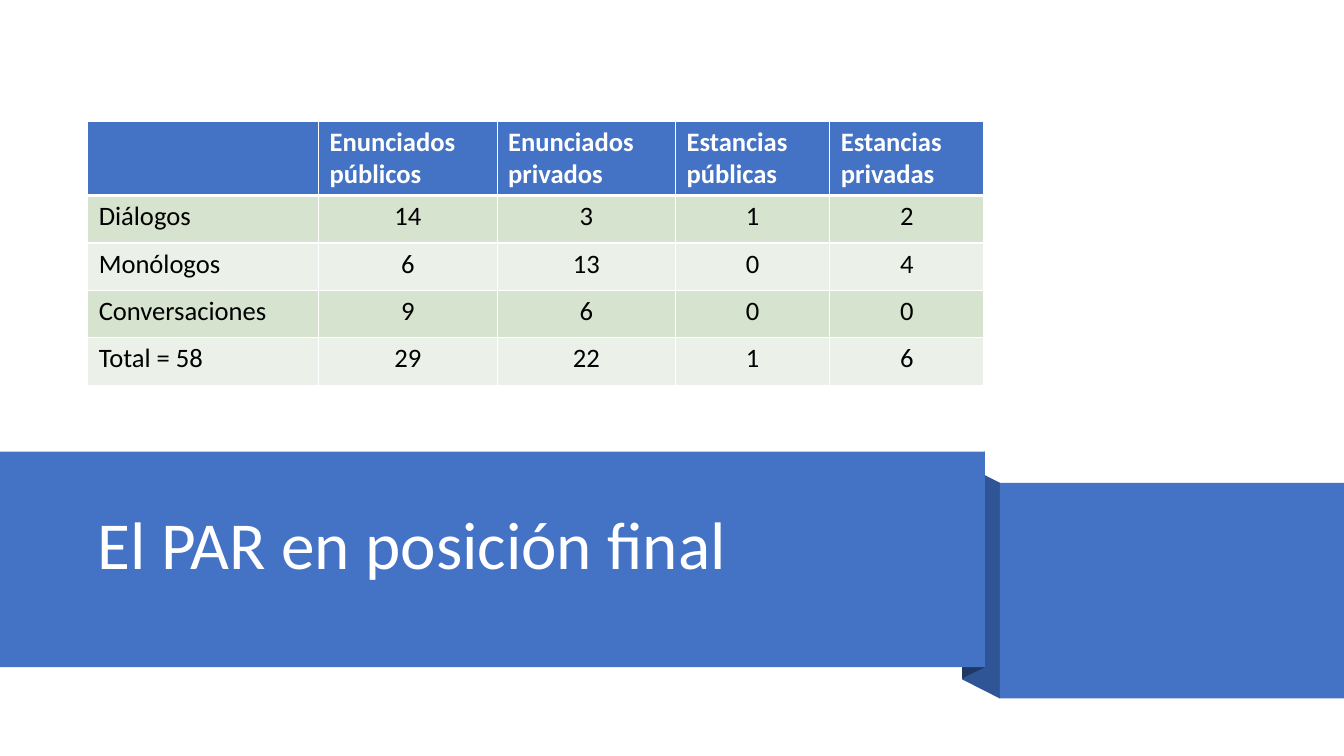
"""Builds the slide on PAR in final position: a table above a folded ribbon title."""
from dataclasses import dataclass

from lxml.etree import SubElement
from pptx import Presentation
from pptx.dml.color import RGBColor as RGB
from pptx.enum.shapes import MSO_SHAPE as SHAPE
from pptx.enum.text import MSO_ANCHOR as ANCHOR, MSO_AUTO_SIZE as AUTOSIZE, PP_ALIGN as ALIGN
from pptx.oxml.ns import qn
from pptx.util import Inches, Pt


@dataclass(frozen=True)
class Theme:
    font: str = "Calibri"
    title_size: float = 48
    table_size: float = 19
    blue: str = "4472C4"
    fold: str = "2F5597"
    deep_fold: str = "203864"
    white: str = "FFFFFF"
    black: str = "000000"
    bands: tuple = ("D5E3CF", "EBF1E9")
    rule: float = 1
    header_rule: float = 3


def assign(target, values):
    for name, value in values.items():
        setattr(target, name, value)


class Page:
    def __init__(self, deck, theme):
        self.theme = theme
        self.width, self.height = deck.slide_width, deck.slide_height
        self.slide = deck.slides.add_slide(deck.slide_layouts[5])

    def x(self, percent):
        return round(self.width * percent / 100)

    def y(self, percent):
        return round(self.height * percent / 100)

    def box(self, left, top, width, height):
        return self.x(left), self.y(top), self.x(width), self.y(height)

    def paint(self, shape, color):
        shape.shadow.inherit = False
        shape.fill.solid()
        shape.fill.fore_color.rgb = RGB.from_string(color)
        shape.line.fill.background()

    def style(self, paragraph, size, color, bold=False, **layout):
        assign(paragraph, layout)
        assign(paragraph.font, {"name": self.theme.font, "size": Pt(size), "bold": bold})
        paragraph.font.color.rgb = RGB.from_string(color)
        for run in paragraph.runs:
            assign(run.font, {"name": self.theme.font, "size": Pt(size), "bold": bold})
            run.font.color.rgb = RGB.from_string(color)

    def band(self, *area):
        self.paint(self.slide.shapes.add_shape(SHAPE.RECTANGLE, *self.box(*area)), self.theme.blue)

    def polygon(self, corners, color):
        start, *rest = [(self.x(across), self.y(down)) for across, down in corners]
        outline = self.slide.shapes.build_freeform(*start)
        outline.add_line_segments(rest, close=True)
        self.paint(outline.convert_to_shape(), color)

    def title(self, text, *area):
        heading = self.slide.shapes.title
        assign(heading, dict(zip(("left", "top", "width", "height"), self.box(*area))))
        frame = heading.text_frame
        frame.text = text
        assign(frame, {"word_wrap": True, "auto_size": AUTOSIZE.NONE,
                       "vertical_anchor": ANCHOR.BOTTOM})
        self.style(frame.paragraphs[0], self.theme.title_size, self.theme.white,
                   alignment=ALIGN.LEFT, line_spacing=0.9)
        self.slide.shapes.element.append(heading.element)

    def borders(self, cell, top, bottom):
        properties = cell._tc.get_or_add_tcPr()
        sides = {"lnL": self.theme.rule, "lnR": self.theme.rule, "lnT": top, "lnB": bottom}
        for side, weight in sides.items():
            edge = SubElement(properties, qn(f"a:{side}"), w=str(Pt(weight)))
            SubElement(SubElement(edge, qn("a:solidFill")), qn("a:srgbClr"), val=self.theme.white)

    def table(self, left, top, columns, heights, rows):
        area = self.box(left, top, sum(columns), sum(heights))
        grid = self.slide.shapes.add_table(len(rows), len(columns), *area).table
        for column, width in zip(grid.columns, columns):
            column.width = self.x(width)
        for number, (row, height, values) in enumerate(zip(grid.rows, heights, rows)):
            row.height = self.y(height)
            for position, (cell, value) in enumerate(zip(row.cells, values)):
                self.cell(cell, str(value), number, position)

    def cell(self, cell, text, row, column):
        theme, header = self.theme, row == 0
        cell.text = text
        assign(cell, {"margin_left": Inches(0.11), "margin_right": Inches(0.11),
                      "margin_top": Inches(0.05), "margin_bottom": Inches(0.05)})
        self.borders(cell, theme.header_rule if row == 1 else theme.rule,
                     theme.header_rule if header else theme.rule)
        cell.fill.solid()
        cell.fill.fore_color.rgb = RGB.from_string(
            theme.blue if header else theme.bands[(row - 1) % 2])
        self.style(cell.text_frame.paragraphs[0], theme.table_size,
                   theme.white if header else theme.black, bold=header,
                   alignment=ALIGN.LEFT if header or column == 0 else ALIGN.CENTER)


def main():
    deck = Presentation()
    assign(deck, {"slide_width": Inches(13.33), "slide_height": Inches(7.5)})
    theme = Theme()
    page = Page(deck, theme)

    margin, band_height = 6.53, 28.53
    front_right, front_top = 73.28, 59.73
    tail_left, tail_top = 74.4, 63.87
    fold_left, fold_top, deep_top = 71.58, 61.33, 61.2

    def fold(outer, outer_top, inner_top):
        return [(outer, outer_top + band_height), (fold_left, inner_top + band_height),
                (fold_left, inner_top), (outer, outer_top)]

    page.polygon(fold(tail_left, tail_top, fold_top), theme.fold)
    page.polygon(fold(front_right, front_top, deep_top), theme.deep_fold)
    page.band(0, front_top, front_right, band_height)
    page.title("El PAR en posición final", margin, 62.27, 65.4, 15.6)
    page.band(tail_left, tail_top, 100 - tail_left, band_height)
    page.table(margin, 16, [17.18, 13.28, 13.28, 11.48, 11.48], [8.67] + [6.27] * 4, [
        ("", "Enunciados públicos", "Enunciados privados",
         "Estancias públicas", "Estancias privadas"),
        ("Diálogos", 14, 3, 1, 2),
        ("Monólogos", 6, 13, 0, 4),
        ("Conversaciones", 9, 6, 0, 0),
        ("Total = 58", 29, 22, 1, 6),
    ])
    deck.save("out.pptx")


if __name__ == "__main__":
    main()
